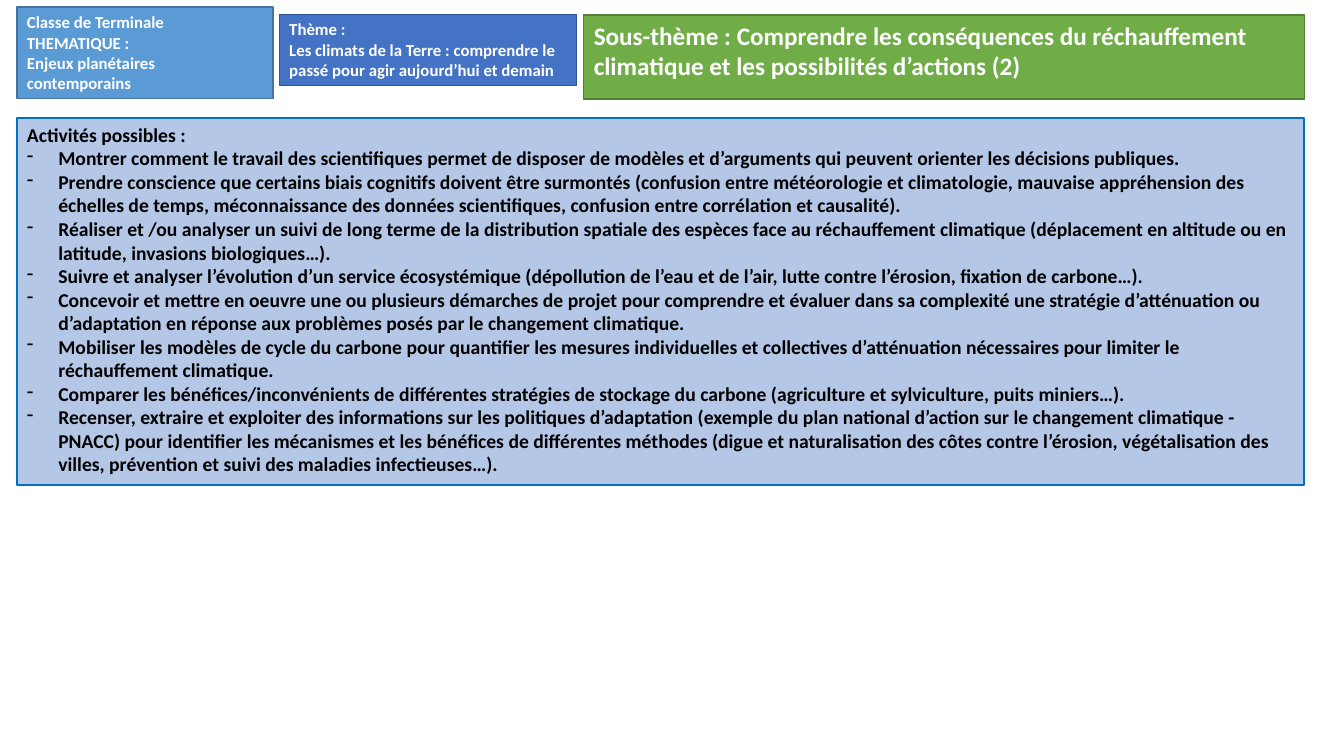
from dataclasses import dataclass

import lxml.etree
import pptx
import pptx.dml.color
import pptx.enum.shapes
import pptx.enum.text
import pptx.oxml.ns
import pptx.shapes.autoshape
import pptx.slide
import pptx.text.text
import pptx.util

Cm = pptx.util.Cm

COLOURS = {
    "white": "FFFFFF",
    "black": "000000",
    "class_fill": "5B9BD5",
    "class_line": "43739E",
    "theme_fill": "4472C4",
    "theme_line": "325491",
    "subtheme_fill": "70AD47",
    "subtheme_line": "538035",
    "activities_fill": "B4C7E7",
    "activities_line": "0070C0",
}
FONT = "Calibri"
BULLET_INDENT = Cm(0.79)


@dataclass(frozen=True)
class Panel:
    name: str
    left: float
    top: float
    width: float
    height: float
    size: int
    lines: tuple[str, ...]
    bullets: tuple[str, ...] = ()
    text_colour: str = "white"
    border: float = 1
    is_title: bool = False


PANELS = (
    Panel("class", 0.43, 0.18, 6.45, 2.31, 12,
          ("Classe de Terminale", "THEMATIQUE :", "Enjeux planétaires contemporains")),
    Panel("subtheme", 14.71, 0.38, 18.16, 1.8, 18,
          ("Sous-thème : Comprendre les conséquences du réchauffement climatique "
           "et les possibilités d’actions (2)",),
          is_title=True),
    Panel("theme", 7.04, 0.36, 7.49, 1.8, 12,
          ("Thème :",
           "Les climats de la Terre : comprendre le passé pour agir aujourd’hui et demain")),
    Panel("activities", 0.43, 2.97, 32.44, 9.25, 14,
          ("Activités possibles :",),
          bullets=(
              "Montrer comment le travail des scientifiques permet de disposer de modèles "
              "et d’arguments qui peuvent orienter les décisions publiques.",
              "Prendre conscience que certains biais cognitifs doivent être surmontés "
              "(confusion entre météorologie et climatologie, mauvaise appréhension des "
              "échelles de temps, méconnaissance des données scientifiques, confusion entre "
              "corrélation et causalité).",
              "Réaliser et /ou analyser un suivi de long terme de la distribution spatiale "
              "des espèces face au réchauffement climatique (déplacement en altitude ou en "
              "latitude, invasions biologiques…).",
              "Suivre et analyser l’évolution d’un service écosystémique (dépollution de "
              "l’eau et de l’air, lutte contre l’érosion, fixation de carbone…).",
              "Concevoir et mettre en oeuvre une ou plusieurs démarches de projet pour "
              "comprendre et évaluer dans sa complexité une stratégie d’atténuation ou "
              "d’adaptation en réponse aux problèmes posés par le changement climatique.",
              "Mobiliser les modèles de cycle du carbone pour quantifier les mesures "
              "individuelles et collectives d’atténuation nécessaires pour limiter le "
              "réchauffement climatique.",
              "Comparer les bénéfices/inconvénients de différentes stratégies de stockage "
              "du carbone (agriculture et sylviculture, puits miniers…).",
              "Recenser, extraire et exploiter des informations sur les politiques "
              "d’adaptation (exemple du plan national d’action sur le changement climatique "
              "- PNACC) pour identifier les mécanismes et les bénéfices de différentes "
              "méthodes (digue et naturalisation des côtes contre l’érosion, végétalisation "
              "des villes, prévention et suivi des maladies infectieuses…).",
          ),
          text_colour="black", border=1.5),
)


def rgb(key: str) -> pptx.dml.color.RGBColor:
    return pptx.dml.color.RGBColor.from_string(COLOURS[key])


def add_dash(para: pptx.text.text._Paragraph) -> None:
    """Give the paragraph a hanging dash bullet."""
    properties = para._p.get_or_add_pPr()
    properties.set("marL", str(BULLET_INDENT))
    properties.set("indent", str(-BULLET_INDENT))
    qn = pptx.oxml.ns.qn
    lxml.etree.SubElement(properties, qn("a:buFontTx"))
    lxml.etree.SubElement(properties, qn("a:buChar")).set("char", "-")


def write_text(box: pptx.shapes.autoshape.Shape, panel: Panel) -> None:
    frame = box.text_frame
    frame.word_wrap = True
    frame.auto_size = pptx.enum.text.MSO_AUTO_SIZE.SHAPE_TO_FIT_TEXT
    frame.vertical_anchor = pptx.enum.text.MSO_ANCHOR.TOP
    for index, text in enumerate(panel.lines + panel.bullets):
        para = frame.add_paragraph() if index else frame.paragraphs[0]
        para.alignment = pptx.enum.text.PP_ALIGN.LEFT
        if index >= len(panel.lines):
            add_dash(para)
        span = para.add_run()
        span.text = text
        span.font.name = FONT
        span.font.size = pptx.util.Pt(panel.size)
        span.font.bold = True
        span.font.color.rgb = rgb(panel.text_colour)


def draw_panel(page: pptx.slide.Slide, panel: Panel) -> None:
    place = [Cm(length) for length in (panel.left, panel.top, panel.width, panel.height)]
    if panel.is_title:
        box = page.shapes.title
        box.left, box.top, box.width, box.height = place
    else:
        box = page.shapes.add_shape(pptx.enum.shapes.MSO_SHAPE.RECTANGLE, *place)
        box.shadow.inherit = False
    box.fill.solid()
    box.fill.fore_color.rgb = rgb(f"{panel.name}_fill")
    box.line.color.rgb = rgb(f"{panel.name}_line")
    box.line.width = pptx.util.Pt(panel.border)
    write_text(box, panel)


def main() -> None:
    deck = pptx.Presentation()
    deck.slide_width, deck.slide_height = Cm(33.87), Cm(19.05)
    page = deck.slides.add_slide(deck.slide_layouts.get_by_name("Title Only"))

    # Header boxes and the list of activities
    for panel in PANELS:
        draw_panel(page, panel)

    deck.save("out.pptx")


if __name__ == "__main__":
    main()
